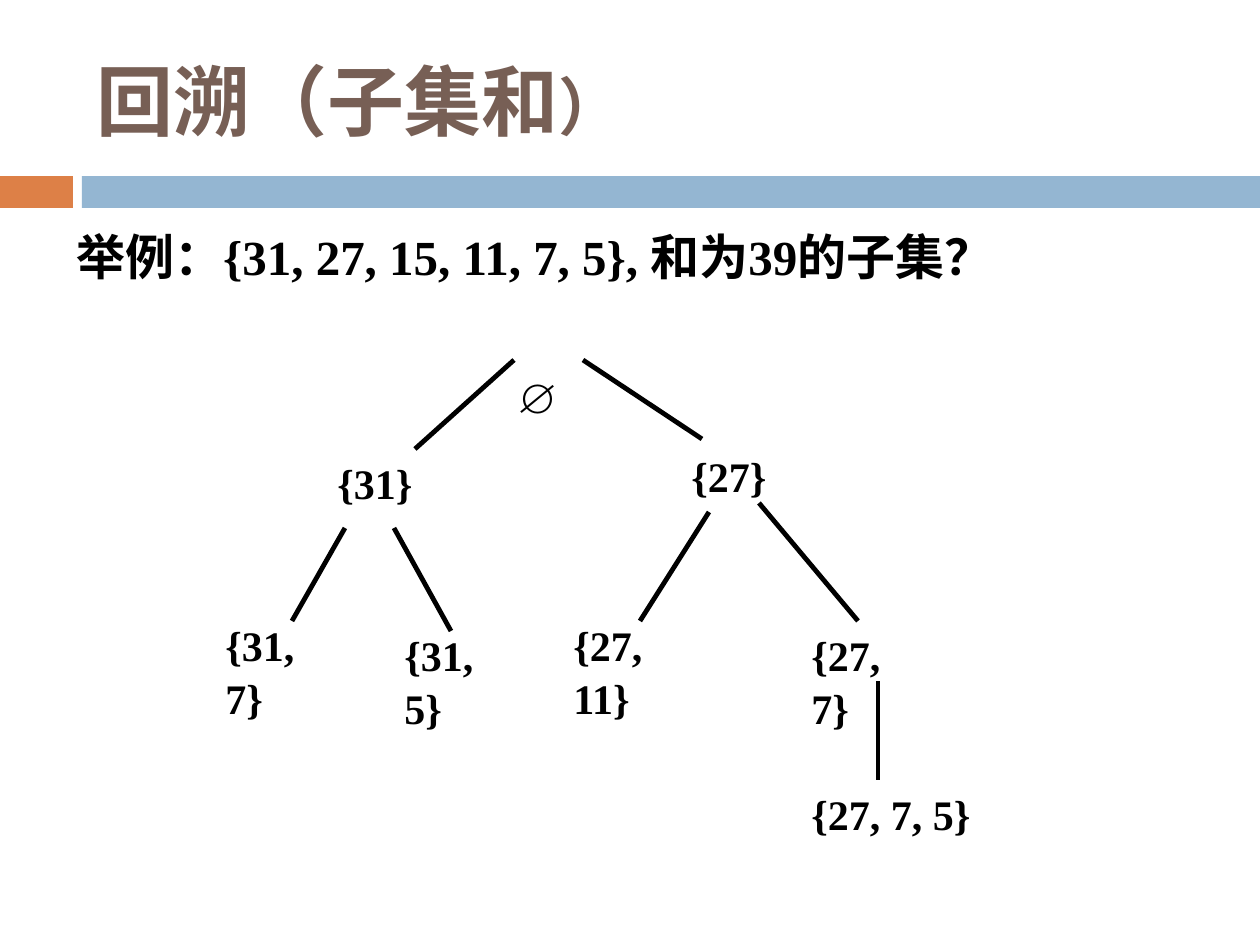
from pptx import Presentation
from pptx.dml.color import RGBColor
from pptx.enum.shapes import MSO_CONNECTOR, MSO_SHAPE
from pptx.enum.text import MSO_ANCHOR, MSO_AUTO_SIZE, PP_ALIGN
from pptx.oxml.ns import qn
from pptx.util import Emu, Pt
from lxml.etree import SubElement

EMU_PER_PX = 914400 / 126


def px(*lengths):
    return [Emu(round(length * EMU_PER_PX)) for length in lengths]


def add_run(paragraph, text, size, color="000000", font="Times New Roman"):
    run = paragraph.add_run()
    run.text = text
    run.font.size = Pt(size)
    run.font.bold = True
    run.font.name = font
    run.font.color.rgb = RGBColor.from_string(color)


deck = Presentation()
deck.slide_width, deck.slide_height = px(1260, 945)
slide = deck.slides.add_slide(deck.slide_layouts[6])
shapes = slide.shapes

for left, width, color in [(0, 73, "DD8047"), (82, 1178, "94B6D2")]:
    band = shapes.add_shape(MSO_SHAPE.RECTANGLE, *px(left, 176, width, 32))
    band.shadow.inherit = False
    band.fill.solid()
    band.fill.fore_color.rgb = RGBColor.from_string(color)
    band.line.fill.background()

title = shapes.add_textbox(*px(84, 32, 1131, 136)).text_frame
title.word_wrap = True
title.vertical_anchor = MSO_ANCHOR.MIDDLE
add_run(title.paragraphs[0], "回溯（子集和", 44, "775F55", "Cabin")
add_run(title.paragraphs[0], "）", 36, "775F55")

question = shapes.add_textbox(*px(64, 214, 1131, 100)).text_frame
question.word_wrap = True
example = question.paragraphs[0]
example.alignment = PP_ALIGN.JUSTIFY
example.line_spacing = 1.1
example.space_before = Pt(8)
add_run(example, "举例：{31, 27, 15, 11, 7, 5}, 和为39的子集？", 28)

branches = [
    (415, 449, 514, 360), (583, 360, 702, 439),
    (640, 621, 709, 512), (858, 621, 759, 503),
    (292, 621, 345, 528), (451, 631, 394, 528),
    (878, 780, 878, 681),
]
for ends in branches:
    branch = shapes.add_connector(MSO_CONNECTOR.STRAIGHT, *px(*ends))
    branch.line.width = Pt(2.75)
    branch.line.color.rgb = RGBColor.from_string("000000")
    SubElement(branch._element.spPr, qn("a:effectLst"))

subsets = [
    (" ∅", 504, 310, 74),
    ("{31}", 325, 449, 113),
    ("{27}", 679, 442, 113),
    ("{31, 7}", 213, 611, 139),
    ("{31, 5}", 392, 621, 139),
    ("{27, 11}", 561, 611, 159),
    ("{27, 7}", 799, 621, 139),
    ("{27, 7, 5}", 799, 780, 198),
]
for text, left, top, width in subsets:
    subset = shapes.add_textbox(*px(left, top, width, 64)).text_frame
    subset.word_wrap = True
    subset.auto_size = MSO_AUTO_SIZE.SHAPE_TO_FIT_TEXT
    subset.paragraphs[0].line_spacing = 1.05
    add_run(subset.paragraphs[0], text, 24)

deck.save("out.pptx")
